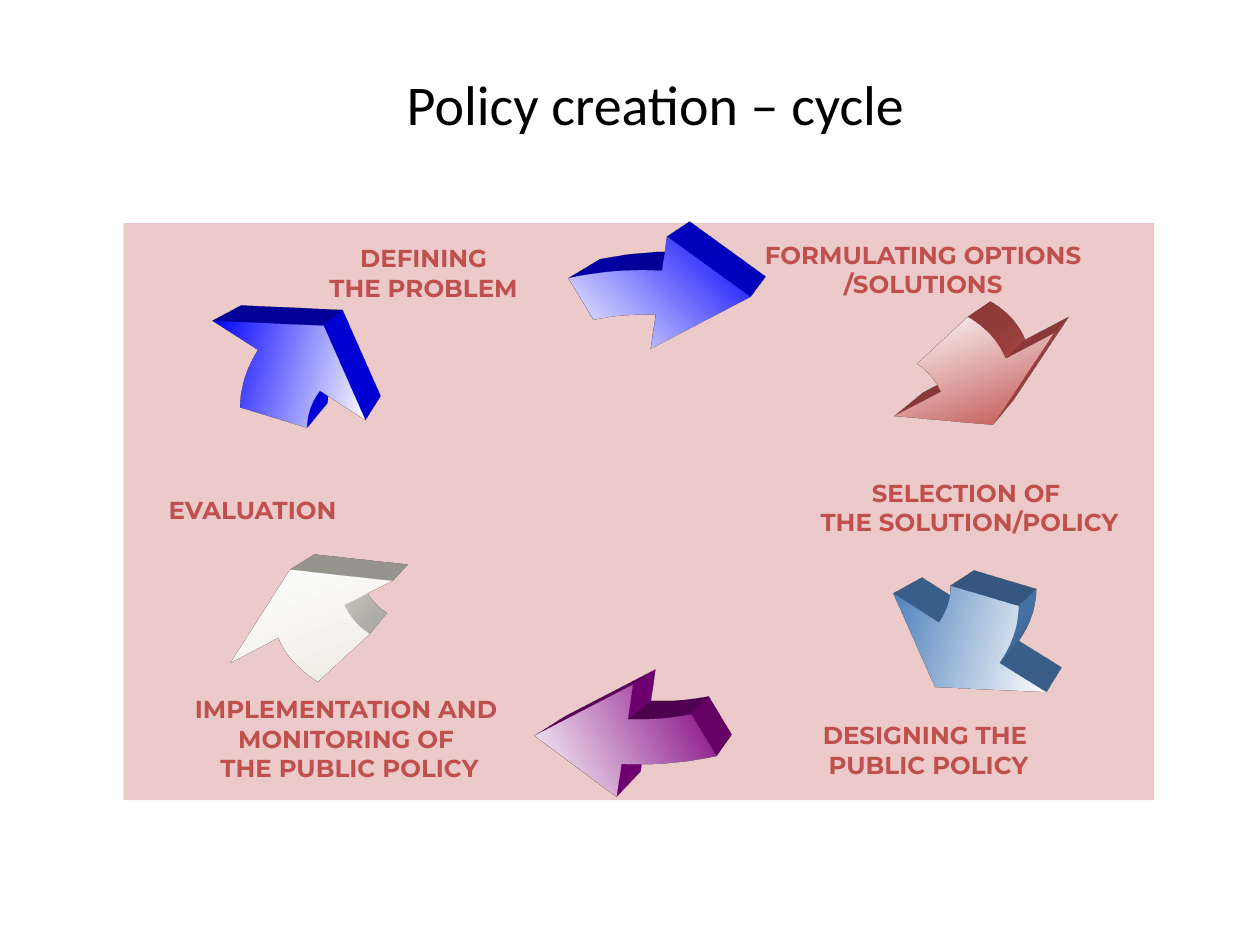
from lxml import etree
from pptx import Presentation, util as u
from pptx.dml.color import RGBColor
from pptx.enum import shapes, text
from pptx.oxml import parse_xml
from pptx.oxml.ns import nsdecls, qn

BLACK = RGBColor(0x00, 0x00, 0x00)
WHITE = RGBColor(0xFF, 0xFF, 0xFF)
RED = RGBColor(0xC0, 0x50, 0x4D)
BLUE = RGBColor(0x00, 0x00, 0xFF)
STEEL = RGBColor(0x4F, 0x81, 0xBD)
PURPLE = RGBColor(0x80, 0x00, 0x80)
CREAM = RGBColor(0xEE, 0xEC, 0xE1)

TITLE_FONT = {"name": "Calibri", "size": u.Pt(32), "bold": False}
LABEL_FONT = {"name": "Montserrat", "size": u.Pt(14), "bold": True}

ARROWS = [
    (BLUE, 45, (3.36, 2.14, 3.47, 2.12),
     [(5.2, 2.5), (4.95, 2.49), (4.71, 2.54), (4.51, 2.21), (4.88, 2.13),
      (5.25, 2.15), (5.29, 1.88), (5.95, 2.36), (5.16, 2.77)]),
    (RED, 290, (4.49, 1.9, 3.96, 3.44),
     [(7.47, 3.11), (7.4, 2.97), (7.28, 2.89), (7.68, 2.52), (7.9, 2.65),
      (7.98, 2.85), (8.36, 2.65), (7.88, 3.37), (7.1, 3.3)]),
    (STEEL, 165, (4.45, 2.53, 4.07, 3.58),
     [(7.45, 4.94), (7.55, 4.8), (7.54, 4.65), (8.08, 4.81), (8.08, 5.04),
      (7.93, 5.26), (8.3, 5.49), (7.42, 5.45), (7.09, 4.71)]),
    (PURPLE, 30, (3.35, 3.94, 3.47, 2.13),
     [(4.98, 5.71), (5.23, 5.72), (5.48, 5.67), (5.68, 6), (5.3, 6.08),
      (4.93, 6.06), (4.89, 6.32), (4.24, 5.84), (5.02, 5.44)]),
    (CREAM, 290, (1.72, 2.49, 4.07, 3.58),
     [(2.73, 4.8), (2.8, 4.95), (2.93, 5.03), (2.52, 5.41), (2.28, 5.25),
      (2.21, 5.06), (1.83, 5.26), (2.3, 4.52), (3.11, 4.61)]),
    (BLUE, 165, (1.47, 1.94, 4.07, 3.58),
     [(2.54, 3.1), (2.44, 3.23), (2.44, 3.39), (1.91, 3.23), (1.91, 3.0),
      (2.05, 2.78), (1.69, 2.55), (2.57, 2.59), (2.9, 3.33)]),
]

LABELS = [
    ((2.19, 1.77, 2.4, 0.79), ["DEFINING ", "THE PROBLEM "]),
    ((1.26, 3.65, 1.49, 0.79), ["EVALUATION"]),
    ((1.36, 5.56, 2.83, 0.6), ["IMPLEMENTATION AND ", "MONITORING OF ", "THE PUBLIC POLICY"]),
    ((5.95, 5.55, 2.84, 0.8), ["DESIGNING THE ", "PUBLIC POLICY"]),
    ((5.9, 1.7, 2.8, 0.87), [" FORMULATING OPTIONS", " /SOLUTIONS"]),
    ((6.39, 3.63, 2.61, 0.79), ["SELECTION OF ", "THE SOLUTION/POLICY"]),
]


def cm(inches):
    """Return a length in inches as a Cm value."""
    return u.Cm(inches * 2.54)


def arc(start, control, end, steps=12):
    """Return points along a quadratic curve."""
    ts = [i / steps for i in range(steps + 1)]
    return [tuple((1 - t) ** 2 * a + 2 * t * (1 - t) * b + t * t * c
                  for a, b, c in zip(start, control, end)) for t in ts]


def add_text(s, box, lines, font, color, wrap=False, inset=0):
    """Add centred lines of text, anchored in the middle of a box."""
    tf = s.shapes.add_textbox(*map(cm, box)).text_frame
    frame = {"word_wrap": wrap, "vertical_anchor": text.MSO_ANCHOR.MIDDLE,
             "margin_left": inset, "margin_right": inset,
             "margin_top": inset, "margin_bottom": inset}
    for name, value in frame.items():
        setattr(tf, name, value)
    for i, line in enumerate(lines):
        p = tf.paragraphs[0] if i == 0 else tf.add_paragraph()
        p.alignment = text.PP_ALIGN.CENTER
        r = p.add_run()
        r.text = line
        for name, value in font.items():
            setattr(r.font, name, value)
        r.font.color.rgb = color


def add_panel(s, box, color, alpha):
    """Add a translucent background rectangle."""
    sp = s.shapes.add_shape(shapes.MSO_SHAPE.RECTANGLE, *map(cm, box))
    sp.shadow.inherit = False
    sp.fill.solid()
    sp.fill.fore_color.rgb = color
    sp.line.fill.background()
    clr = sp._element.spPr.find(".//" + qn("a:srgbClr"))
    etree.SubElement(clr, qn("a:alpha")).set("val", str(alpha * 1000))


def set_frame(sp, box):
    """Give a freeform a new frame while its outline stays in place."""
    left, top, width, height = map(cm, box)
    dx, dy = sp.left - left, sp.top - top
    outline = sp._element.spPr.find(".//" + qn("a:path"))
    outline.set("w", str(width))
    outline.set("h", str(height))
    for pt in outline.iter(qn("a:pt")):
        pt.set("x", str(int(pt.get("x")) + dx))
        pt.set("y", str(int(pt.get("y")) + dy))
    sp.left, sp.top, sp.width, sp.height = left, top, width, height


def extrude(sp, color):
    """Give a shape depth towards the top right."""
    sp._element.spPr.append(parse_xml(
        f'<a:scene3d {nsdecls("a")}><a:camera prst="legacyPerspectiveTopRight"/>'
        '<a:lightRig rig="legacyFlat3" dir="b"/></a:scene3d>'))
    sp._element.spPr.append(parse_xml(
        f'<a:sp3d {nsdecls("a")} extrusionH="887400" prstMaterial="legacyMatte">'
        f'<a:extrusionClr><a:srgbClr val="{color}"/></a:extrusionClr></a:sp3d>'))


def add_arrow(s, color, angle, box, pts):
    """Add a curved block arrow with a gradient and depth."""
    outline = arc(*pts[:3]) + arc(*pts[3:6]) + pts[6:]
    outline = [(cm(x), cm(y)) for x, y in outline]
    fb = s.shapes.build_freeform(*outline[0], scale=1.0)
    fb.add_line_segments(outline[1:], close=True)
    sp = fb.convert_to_shape()
    set_frame(sp, box)
    sp.shadow.inherit = False
    sp.fill.gradient()
    sp.fill.gradient_angle = angle
    for stop, rgb, pos in zip(sp.fill.gradient_stops, (WHITE, color), (0, 1)):
        stop.color.rgb = rgb
        stop.position = pos
    sp.line.fill.background()
    extrude(sp, color)


def main():
    """Build the policy cycle slide."""
    prs = Presentation()
    prs.slide_width, prs.slide_height = cm(10), cm(7.5)
    s = prs.slides.add_slide(prs.slide_layouts[6])
    add_text(s, (1.92, 0.41, 6.67, 0.81), ["Policy creation – cycle "], TITLE_FONT,
             BLACK, wrap=True, inset=cm(0.05))
    add_panel(s, (0.98, 1.77, 8.18, 4.58), RED, 30)
    for color, angle, box, pts in ARROWS:
        add_arrow(s, color, angle, box, pts)
    for box, lines in LABELS:
        add_text(s, box, lines, LABEL_FONT, RED)
    prs.save("out.pptx")


if __name__ == "__main__":
    main()
